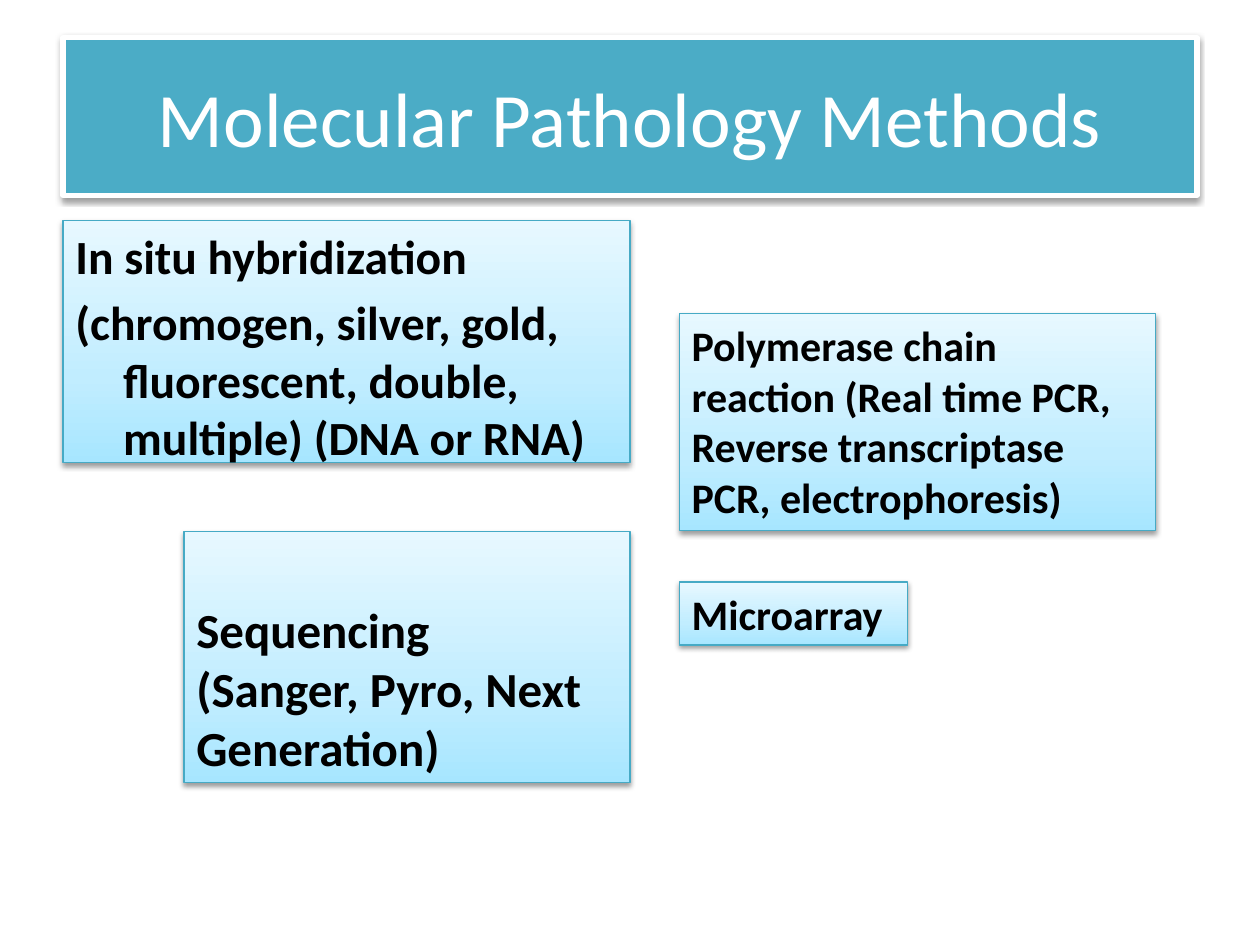
"""Build the Molecular Pathology Methods slide."""
from lxml import etree
from pptx import Presentation
from pptx.dml.color import RGBColor
from pptx.enum import shapes, text
from pptx.oxml import ns
from pptx.util import Inches, Pt

THEME = {
    "font": "Calibri", "banner": "4BACC6", "white": "FFFFFF", "ink": "000000",
    "border": "46AAC5", "stops": [(0, "A7E6FF"), (35, "C1EDFF"), (100, "E7F8FF")],
    "title": 44, "hybridization": 27.2, "sequencing": 28, "small": 24,
}


def outline_and_shadow(box, color, width):
    box.line.color.rgb = RGBColor.from_string(color)
    box.line.width = Pt(width)
    box.shadow.inherit = False
    effects = box._element.spPr.find(ns.qn("a:effectLst"))
    shadow = etree.SubElement(effects, ns.qn("a:outerShdw"), blurRad=str(Pt(3.1)),
                              dist=str(Pt(1.6)), dir="5400000", rotWithShape="0")
    tint = etree.SubElement(shadow, ns.qn("a:srgbClr"), val=THEME["ink"])
    etree.SubElement(tint, ns.qn("a:alpha"), val="38000")


def add_words(paragraph, words, size, color, bold):
    run = paragraph.add_run()
    run.text = words
    run.font.name = THEME["font"]
    run.font.size = Pt(size)
    run.font.bold = bold
    run.font.color.rgb = RGBColor.from_string(color)


prs = Presentation()
prs.slide_width, prs.slide_height = Inches(10), Inches(7.5)
slide = prs.slides.add_slide(prs.slide_layouts[5])

title = slide.shapes.title
title.left, title.top, title.width, title.height = map(Inches, (0.5, 0.3, 9, 1.25))
title.fill.solid()
title.fill.fore_color.rgb = RGBColor.from_string(THEME["banner"])
outline_and_shadow(title, THEME["white"], 3)
title.text_frame.auto_size = text.MSO_AUTO_SIZE.NONE
title.text_frame.vertical_anchor = text.MSO_ANCHOR.MIDDLE
heading = title.text_frame.paragraphs[0]
heading.alignment = text.PP_ALIGN.CENTER
add_words(heading, "Molecular Pathology Methods", THEME["title"], THEME["white"], False)

TOP, BOTTOM = text.MSO_ANCHOR.TOP, text.MSO_ANCHOR.BOTTOM
methods = [
    ((0.5, 1.75, 4.5, 1.92), "hybridization", TOP, 0.38,
     ["In situ hybridization",
      "(chromogen, silver, gold, fluorescent, double, multiple) (DNA or RNA)"]),
    ((5.39, 2.49, 3.78, 1.72), "small", TOP, 0,
     ["Polymerase chain reaction (Real time PCR, Reverse transcriptase PCR, electrophoresis)"]),
    ((1.46, 4.22, 3.54, 1.99), "sequencing", BOTTOM, 0,
     ["Sequencing", "(Sanger, Pyro, Next Generation)"]),
    ((5.39, 4.62, 1.81, 0.5), "small", TOP, 0, ["Microarray"]),
]

for place, size_name, anchor, hanging, lines in methods:
    method = slide.shapes.add_shape(shapes.MSO_SHAPE.RECTANGLE, *map(Inches, place))
    method.fill.gradient()
    method.fill.gradient_angle = 90
    stops = method._element.spPr.find(".//" + ns.qn("a:gsLst"))
    stops[:] = []
    for percent, color in THEME["stops"]:
        stop = etree.SubElement(stops, ns.qn("a:gs"), pos=str(percent * 1000))
        etree.SubElement(stop, ns.qn("a:srgbClr"), val=color)
    outline_and_shadow(method, THEME["border"], 0.75)

    frame = method.text_frame
    frame.word_wrap = True
    frame.auto_size = text.MSO_AUTO_SIZE.NONE
    frame.vertical_anchor = anchor
    size = THEME[size_name]
    for number, words in enumerate(lines):
        paragraph = frame.add_paragraph() if number else frame.paragraphs[0]
        paragraph.alignment = text.PP_ALIGN.LEFT
        if hanging:
            paragraph.space_before = Pt(0.2 * size)
            properties = paragraph._p.get_or_add_pPr()
            properties.set("marL", str(Inches(hanging)))
            properties.set("indent", str(-Inches(hanging)))
        add_words(paragraph, words, size, THEME["ink"], True)

prs.save("out.pptx")
